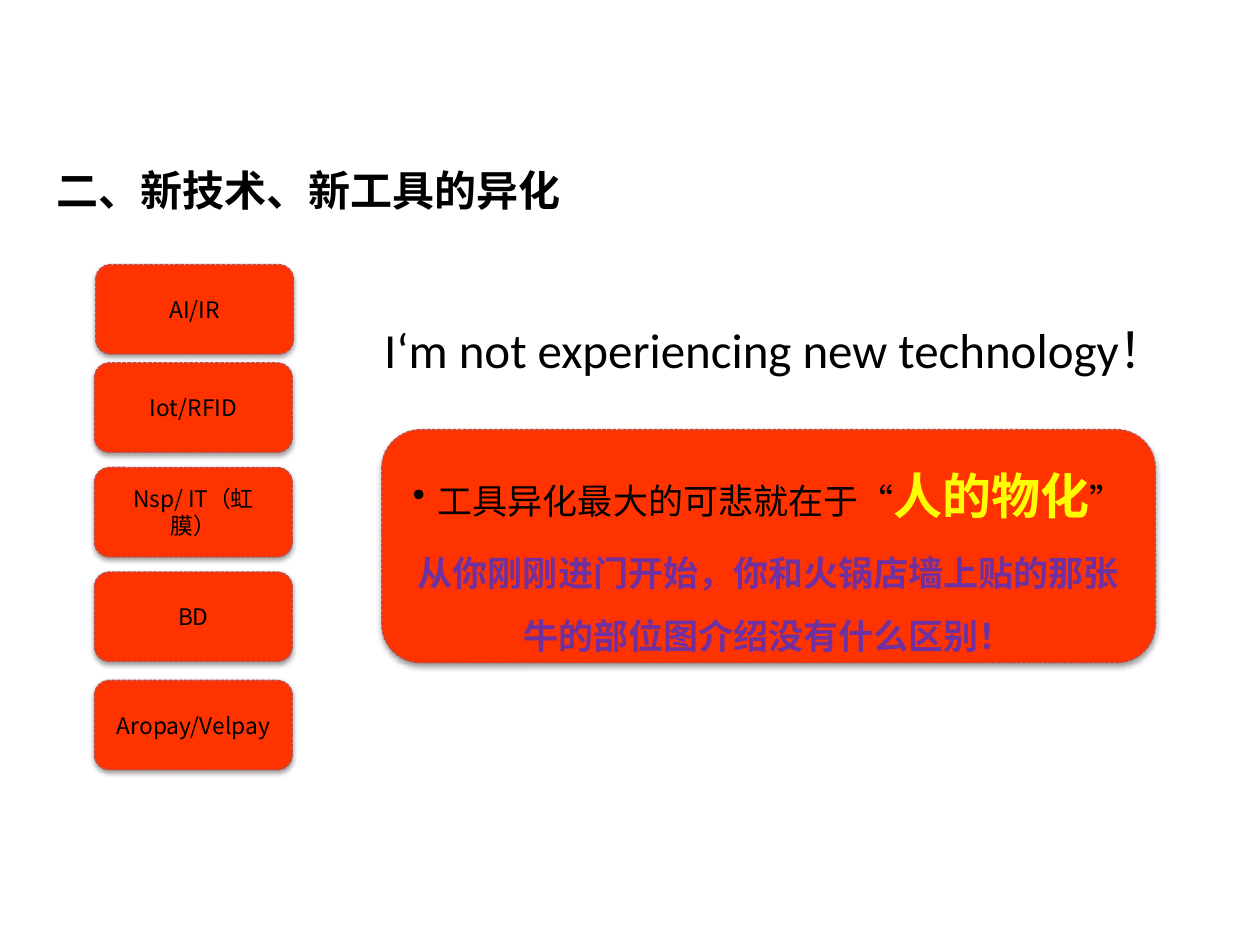
from lxml import etree
from pptx import Presentation
from pptx.dml.color import RGBColor
from pptx.enum.dml import MSO_LINE
from pptx.enum.shapes import MSO_SHAPE
from pptx.enum.text import MSO_ANCHOR, MSO_AUTO_SIZE, PP_ALIGN
from pptx.oxml.ns import qn
from pptx.util import Inches, Pt

LEFT, CENTER = PP_ALIGN.LEFT, PP_ALIGN.CENTER
MIDDLE = MSO_ANCHOR.MIDDLE
ROUNDED = MSO_SHAPE.ROUNDED_RECTANGLE
DASH = MSO_LINE.SQUARE_DOT
FIT_SHAPE, NO_FIT = MSO_AUTO_SIZE.SHAPE_TO_FIT_TEXT, MSO_AUTO_SIZE.NONE
TITLE_ONLY = 5

COLORS = {"text": "000000", "card": "FF3300", "border": "BF4C48",
          "shadow": "000000", "highlight": "FFFF00", "verdict": "7030A0"}
CJK_FONT, LATIN_FONT = "Noto Sans CJK SC", "Calibri"


def rgb(name):
    return RGBColor.from_string(COLORS[name])


def add_run(paragraph, text, size=20, color="text", bold=False, font=CJK_FONT):
    run = paragraph.add_run()
    run.text = text
    run.font.size = Pt(size)
    run.font.bold = bold
    run.font.name = font
    run.font.color.rgb = rgb(color)
    etree.SubElement(run.font._element, qn("a:ea"), typeface=CJK_FONT)


def add_bullet(paragraph, indent):
    properties = paragraph._p.get_or_add_pPr()
    properties.set("marL", str(indent))
    properties.set("indent", str(-indent))
    etree.SubElement(properties, qn("a:buFont"), typeface="Arial")
    etree.SubElement(properties, qn("a:buChar"), char="•")


def add_soft_shadow(shape):
    shape.shadow.inherit = False
    effects = shape._element.spPr.find(qn("a:effectLst"))
    shadow = etree.SubElement(effects, qn("a:outerShdw"), blurRad=str(Pt(3.1)),
                              dist=str(Pt(1.6)), dir="5400000", rotWithShape="0")
    color = etree.SubElement(shadow, qn("a:srgbClr"), val=COLORS["shadow"])
    etree.SubElement(color, qn("a:alpha"), val="38000")


class SlideBuilder:
    """Places elements by percentages of the slide's width and height."""

    def __init__(self, presentation):
        self.width = presentation.slide_width
        self.height = presentation.slide_height
        self.slide = presentation.slides.add_slide(presentation.slide_layouts[TITLE_ONLY])

    def box(self, left, top, width, height):
        return (int(self.width * left / 100), int(self.height * top / 100),
                int(self.width * width / 100), int(self.height * height / 100))

    def title(self, text, *place):
        title = self.slide.shapes.title
        title.left, title.top, title.width, title.height = self.box(*place)
        frame = title.text_frame
        frame.auto_size = NO_FIT
        frame.vertical_anchor = MIDDLE
        frame.paragraphs[0].alignment = LEFT
        add_run(frame.paragraphs[0], text, size=24, bold=True)

    def caption(self, text, *place):
        frame = self.slide.shapes.add_textbox(*self.box(*place)).text_frame
        frame.word_wrap = False
        frame.auto_size = FIT_SHAPE
        add_run(frame.paragraphs[0], text, size=28, font=LATIN_FONT)

    def card(self, *place):
        """Add a red rounded card and return its text frame."""
        shape = self.slide.shapes.add_shape(ROUNDED, *self.box(*place))
        shape.fill.solid()
        shape.fill.fore_color.rgb = rgb("card")
        shape.line.color.rgb = rgb("border")
        shape.line.width = Pt(0.75)
        shape.line.dash_style = DASH
        add_soft_shadow(shape)
        frame = shape.text_frame
        frame.word_wrap = True
        frame.vertical_anchor = MIDDLE
        frame.paragraphs[0].alignment = CENTER
        return frame

    def tag(self, text, *place):
        add_run(self.card(*place).paragraphs[0], text, size=13)

    def statement(self, runs, verdict, *place):
        frame = self.card(*place)
        lead = frame.paragraphs[0]
        add_bullet(lead, Inches(0.2))
        for text, style in runs:
            add_run(lead, text, **style)
        closing = frame.add_paragraph()
        closing.alignment = CENTER
        closing.space_before = Pt(4)
        add_run(closing, verdict, color="verdict", bold=True)
        for paragraph in frame.paragraphs:
            paragraph.line_spacing = 1.5


def main():
    presentation = Presentation()
    presentation.slide_width, presentation.slide_height = Inches(10), Inches(7.5)
    builder = SlideBuilder(presentation)

    builder.title("二、新技术、新工具的异化", 3.5, 16.4, 61.4, 7.33)

    tags = [("AI/IR", 7.6, 28), ("Iot/RFID", 7.5, 38.4), ("Nsp/ IT（虹膜）", 7.5, 49.47),
            ("BD", 7.5, 60.53), ("Aropay/Velpay", 7.5, 72)]
    for text, left, top in tags:
        builder.tag(text, left, top, 15.7, 9.47)

    builder.caption("I‘m not experiencing new technology！", 29.5, 33.2, 67.2, 7.6)
    builder.statement(
        [("工具异化最大的可悲就在于“", {}),
         ("人的物化", {"size": 28, "color": "highlight", "bold": True}),
         ("”", {})],
        "从你刚刚进门开始，你和火锅店墙上贴的那张牛的部位图介绍没有什么区别！",
        30.3, 45.47, 61.4, 24.67)

    presentation.save("out.pptx")


if __name__ == "__main__":
    main()
